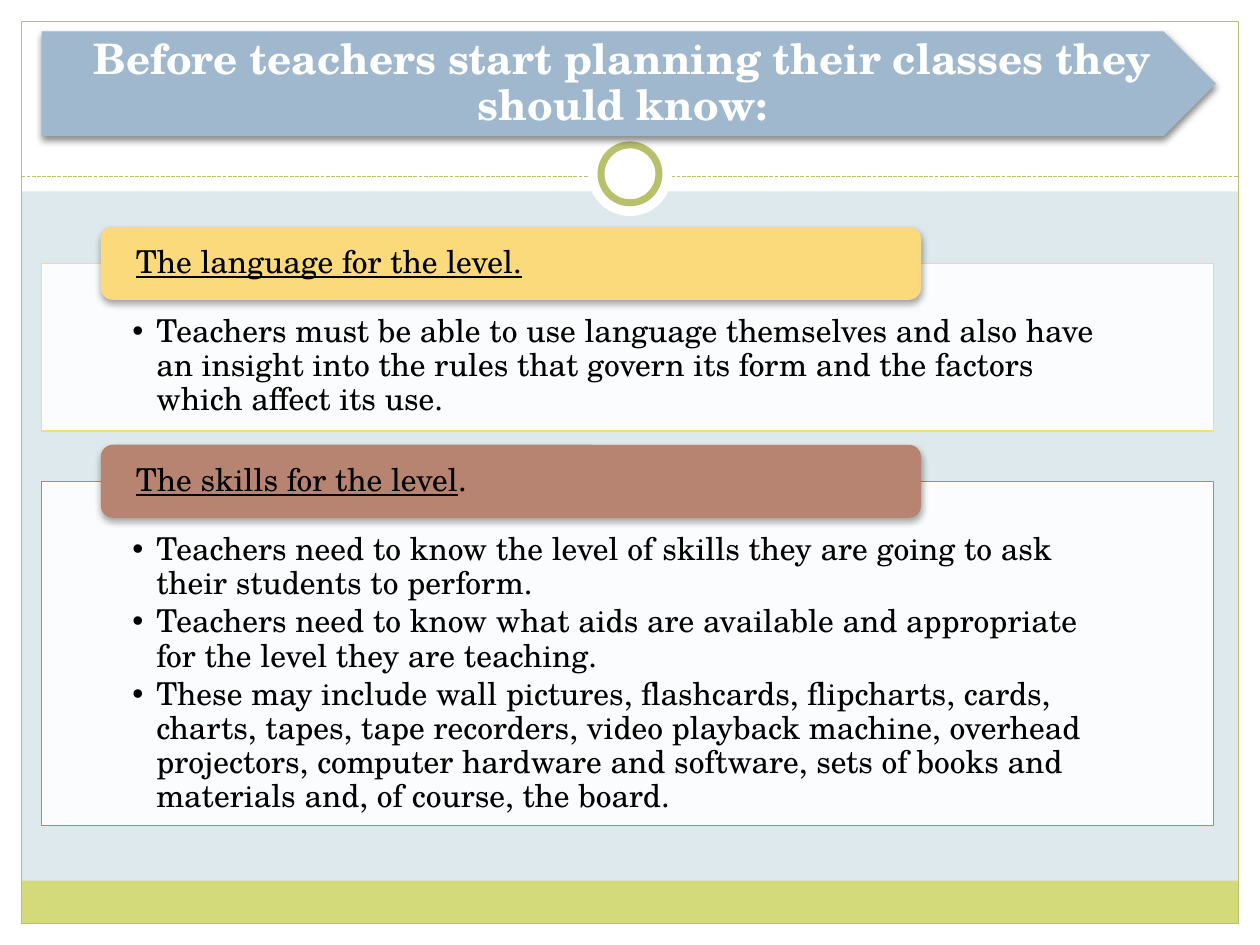
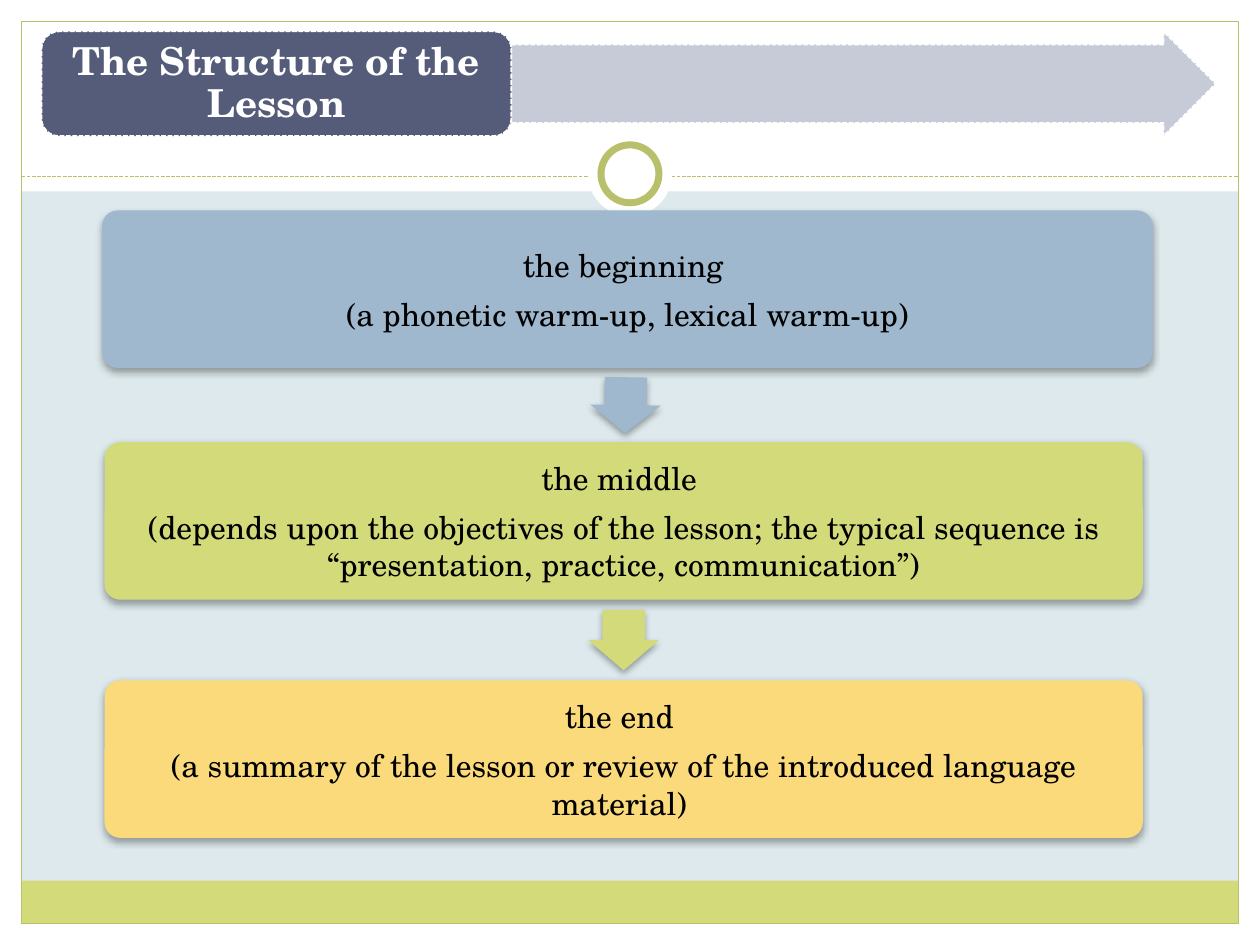
from dataclasses import dataclass
from itertools import pairwise
from math import atan2, degrees

from lxml.etree import SubElement
from pptx import Presentation
from pptx.dml.color import RGBColor
from pptx.enum.dml import MSO_LINE
from pptx.enum.shapes import MSO_CONNECTOR, MSO_SHAPE as Preset
from pptx.enum.text import MSO_ANCHOR as Anchor, MSO_AUTO_SIZE, PP_ALIGN as Align
from pptx.oxml.ns import qn
from pptx.util import Inches, Pt

WHITE = RGBColor(0xFF, 0xFF, 0xFF)
BLACK = RGBColor(0, 0, 0)
PALE_BLUE = RGBColor(0xDD, 0xE9, 0xEC)
LIME = RGBColor(0xD2, 0xDA, 0x7A)
OLIVE = RGBColor(0xB9, 0xC0, 0x6C)
BLUE = RGBColor(0x9F, 0xB8, 0xCD)
YELLOW = RGBColor(0xFA, 0xDA, 0x7A)
BROWN = RGBColor(0xB8, 0x84, 0x72)
SLATE = RGBColor(0x54, 0x5C, 0x79)
LAVENDER = RGBColor(0xC2, 0xC5, 0xD3)

FONT = "TeX Gyre Schola"
TEXT_SIZE = 18

# The slide is a grid of square cells
COLS, ROWS = 100, 75
CELL = Inches(0.1)


@dataclass
class Box:
    """A region of the slide, in columns and rows."""
    left: float
    top: float
    width: float
    height: float

    @property
    def bottom(self):
        return self.top + self.height

    @property
    def center(self):
        return self.left + self.width / 2

    def area(self, left, top, width, height):
        return Box(self.left + left, self.top + top, width, height)

    def emu(self):
        return [round(n * CELL) for n in (self.left, self.top, self.width, self.height)]


TITLE_BAND = Box(3.3, 2.5, 93.2, 8.3)


# Shared drawing helpers
def set_line(shape, color, width=0.75, dash=None):
    shape.line.color.rgb = color
    shape.line.width = Pt(width)
    if dash:
        shape.line.dash_style = dash


def add_alpha(color_element, percent):
    SubElement(color_element, qn("a:alpha"), val=str(percent * 1000))


def set_fill(shape, color, opacity=100):
    shape.fill.solid()
    shape.fill.fore_color.rgb = color
    if opacity < 100:
        add_alpha(shape.element.spPr.find(qn("a:solidFill"))[0], opacity)


def add_block(slide, preset, box, color=None, shadow=0, opacity=100, adjust=()):
    block = slide.shapes.add_shape(preset, *box.emu())
    block.shadow.inherit = False
    block.line.fill.background()
    for index, value in enumerate(adjust):
        block.adjustments[index] = value
    if color is None:
        block.fill.background()
    else:
        set_fill(block, color, opacity)
    if shadow:
        effects = block.element.spPr.find(qn("a:effectLst"))
        outer = SubElement(effects, qn("a:outerShdw"), blurRad=str(Pt(4)),
                           dist=str(Pt(2)), dir="5400000", rotWithShape="0")
        add_alpha(SubElement(outer, qn("a:srgbClr"), val=str(BLACK)), shadow)
    return block


def set_frame(shape, insets, anchor):
    frame = shape.text_frame
    frame.word_wrap = True
    frame.auto_size = MSO_AUTO_SIZE.NONE
    frame.vertical_anchor = anchor
    (frame.margin_left, frame.margin_top,
     frame.margin_right, frame.margin_bottom) = map(Inches, insets)
    return frame


def format_text(frame, size=TEXT_SIZE, color=BLACK, bold=False,
                align=Align.LEFT, spacing=0.9, after=0.35):
    for paragraph in frame.paragraphs:
        paragraph.alignment = align
        paragraph.line_spacing = spacing
        paragraph.space_before = Pt(0)
        paragraph.space_after = Pt(after * size)
        for run in paragraph.runs:
            run.font.name = FONT
            run.font.size = Pt(size)
            run.font.bold = bold
            run.font.color.rgb = color


def place(placeholder, box):
    (placeholder.left, placeholder.top,
     placeholder.width, placeholder.height) = box.emu()


def write_title(slide, text, box, size, insets):
    title = slide.shapes.title
    place(title, box)
    frame = set_frame(title, insets, Anchor.MIDDLE)
    frame.text = text
    format_text(frame, size, WHITE, bold=True, align=Align.CENTER)
    # Bring the title in front of its band
    slide.shapes.element.append(title.element)


def build_master(master, slide):
    """Draws the common frame and hands its pieces over to the master."""
    master.background.fill.solid()
    master.background.fill.fore_color.rgb = PALE_BLUE
    edge = 1.7
    inner = Box(edge, edge, COLS - 2 * edge, ROWS - 2 * edge)

    # White margins, header and green footer
    bands = [add_block(slide, Preset.RECTANGLE, box, color) for box, color in (
        (Box(0, ROWS - edge, COLS, edge), WHITE),
        (Box(0, 0, COLS, 15.2), WHITE),
        (Box(0, 0, edge, ROWS), WHITE),
        (Box(COLS - edge, 0, edge, ROWS), WHITE),
        (inner.area(0, inner.height - 3.4, inner.width, 3.4), LIME),
    )]
    outline = add_block(slide, Preset.RECTANGLE, inner)
    set_line(outline, OLIVE)

    # Dashed divider
    left, y, right = (round(n * CELL) for n in (edge, 14, COLS - edge))
    divider = slide.shapes.add_connector(MSO_CONNECTOR.STRAIGHT, left, y, right, y)
    set_line(divider, OLIVE, dash=MSO_LINE.SQUARE_DOT)
    divider.element.spPr.find(qn("a:ln")).find(qn("a:prstDash")).set("val", "sysDash")
    SubElement(divider.element.spPr, qn("a:effectLst"))

    # Ring on the divider
    halo, ring = (
        add_block(slide, Preset.OVAL,
                  Box((COLS - size) / 2, 13.8 - size / 2, size, size), WHITE)
        for size in (6.7, 4.6))
    set_line(ring, OLIVE, 4)

    for number, piece in enumerate(bands + [outline, divider, halo, ring], start=20):
        piece.element.xpath(".//p:cNvPr")[0].set("id", str(number))
        master.shapes.element.append(piece.element)


# Slide 1: what teachers should know
def add_panel(slide, body, box, color, heading, tail, points):
    tab_height, overlap = 5.8, 2.9

    # Bulleted list in a framed panel
    place(body, box.area(0, overlap, box.width, box.height - overlap))
    set_fill(body, WHITE, opacity=90)
    set_line(body, color)
    frame = set_frame(body, (0.72, 0.41, 0.72, 0.14), Anchor.TOP)
    frame.text = "\n".join(points)
    format_text(frame, after=0.15)
    for paragraph in frame.paragraphs:
        properties = paragraph._p.get_or_add_pPr()
        properties.set("marL", str(Inches(0.19)))
        properties.set("indent", str(-Inches(0.19)))
        SubElement(properties, qn("a:buChar"), char="•")

    # Heading tab over the panel's top edge
    tab = add_block(slide, Preset.ROUNDED_RECTANGLE,
                    box.area(4.7, 0, 65.1, tab_height), color, shadow=35)
    label = set_frame(tab, (0.25, 0, 0.25, 0), Anchor.MIDDLE)
    label.text = heading
    line = label.paragraphs[0]
    line.runs[0].font.underline = True
    if tail:
        line.add_run().text = tail
    format_text(label)


def build_knowledge_slide(slide):
    add_block(slide, Preset.PENTAGON, TITLE_BAND, BLUE, shadow=45)
    write_title(slide, "Before teachers start planning their classes they should know:",
                TITLE_BAND.area(0, 0, 91.2, TITLE_BAND.height), 24,
                (0.14, 0.07, 0.04, 0.07))
    panels = (
        (16.2, YELLOW, "The language for the level.", "", (
            "Teachers must be able to use language themselves and also have an insight "
            "into the rules that govern its form and the factors which affect its use.",
        )),
        (30.2, BROWN, "The skills for the level", ".", (
            "Teachers need to know the level of skills they are going to ask their "
            "students to perform.",
            "Teachers need to know what aids are available and appropriate for the "
            "level they are teaching.",
            "These may include wall pictures, flashcards, flipcharts, cards, charts, "
            "tapes, tape recorders, video playback machine, overhead projectors, "
            "computer hardware and software, sets of books and materials and, of "
            "course, the board.",
        )),
    )
    top, gap = 18, 1.1
    for index, (height, *content) in enumerate(panels, start=1):
        add_panel(slide, slide.placeholders[index], Box(3.3, top, 93, height), *content)
        top += height + gap


# Slide 2: the stages of a lesson
def add_step(slide, box, color, lines):
    step = add_block(slide, Preset.ROUNDED_RECTANGLE, box, color, shadow=35, adjust=[0.1])
    frame = set_frame(step, [0.07] * 4, Anchor.MIDDLE)
    frame.text = "\n".join(lines)
    format_text(frame, align=Align.CENTER, spacing=1.0)


def add_step_arrow(slide, upper, lower, color):
    """Points from one step to the next, in the middle of their gap."""
    gap = lower.top - upper.bottom
    width, height = 5.6, 0.75 * gap
    center = (upper.center + lower.center) / 2
    arrow = add_block(
        slide, Preset.DOWN_ARROW,
        Box(center - width / 2, upper.bottom + (gap - height) / 2, width, height),
        color, shadow=35, adjust=[0.6, 0.5])
    arrow.rotation = degrees(atan2(upper.center - lower.center, lower.top - upper.top))


def build_structure_slide(slide):
    # Title block with an arrow running to the right
    block_width = 0.4 * TITLE_BAND.width
    height = TITLE_BAND.height
    block = TITLE_BAND.area(0, 0, block_width, height)
    tail = TITLE_BAND.area(block_width, 0, TITLE_BAND.width - block_width, height)
    for shape in (
        add_block(slide, Preset.RIGHT_ARROW, tail, LAVENDER, opacity=90, adjust=[0.75, 0.5]),
        add_block(slide, Preset.ROUNDED_RECTANGLE, block, SLATE),
    ):
        set_line(shape, WHITE, 0.9, MSO_LINE.SQUARE_DOT)
    write_title(slide, "The Structure of the Lesson",
                block.area(0.4, 0.4, block.width - 0.8, height - 0.8), 22,
                (0.09, 0.05, 0.09, 0.05))

    steps = (
        (Box(8.1, 16.7, 83.4, 12.5), BLUE,
         ("the beginning ", "(a phonetic warm-up, lexical warm-up)")),
        (Box(8.3, 35.1, 82.4, 12.5), LIME,
         ("the middle ", "(depends upon the objectives of the lesson; the typical "
          "sequence is “presentation, practice, communication”)")),
        (Box(8.3, 54, 82.4, 12.5), YELLOW,
         ("the end ", "(a summary of the lesson or review of the introduced "
          "language material) ")),
    )
    for step in steps:
        add_step(slide, *step)
    for (upper, color, _), (lower, *_) in pairwise(steps):
        add_step_arrow(slide, upper, lower, color)


def main():
    deck = Presentation()
    deck.slide_width, deck.slide_height = COLS * CELL, ROWS * CELL
    two_content, title_only = deck.slide_layouts[3], deck.slide_layouts[5]

    knowledge = deck.slides.add_slide(two_content)
    build_master(deck.slide_master, knowledge)
    build_knowledge_slide(knowledge)
    build_structure_slide(deck.slides.add_slide(title_only))
    deck.save("out.pptx")


if __name__ == "__main__":
    main()
